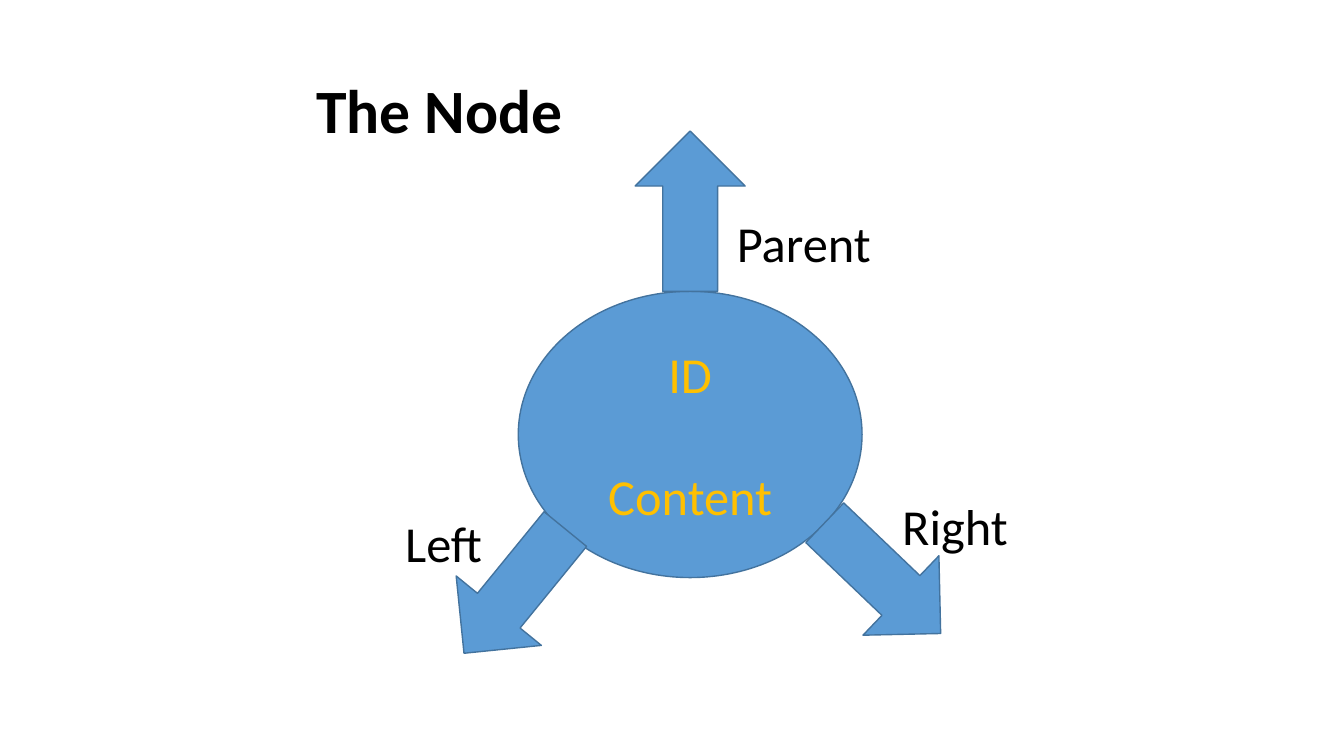
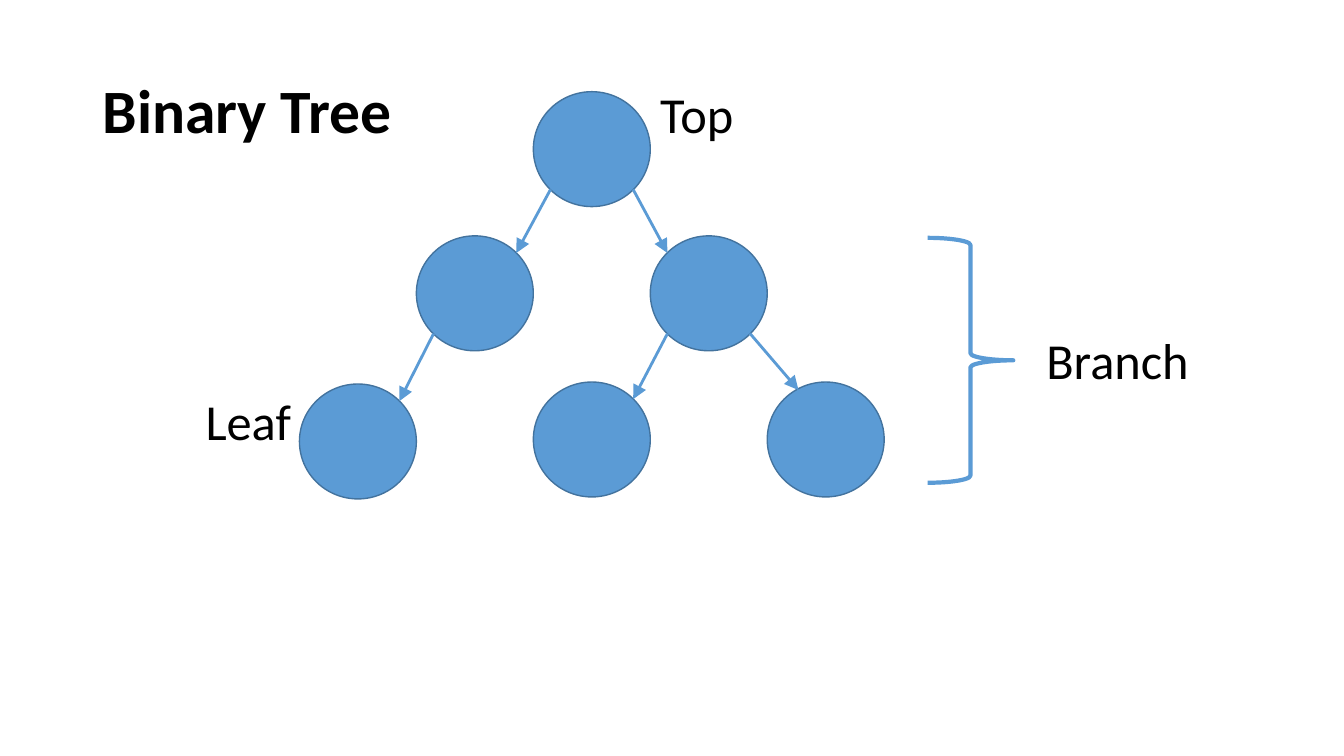
import pptx
import pptx.util
import pptx.dml.color
import pptx.enum.shapes
import pptx.enum.text
import pptx.oxml
import pptx.oxml.ns

PX = 9144
BLUE, EDGE, GOLD, BLACK = "5B9BD5", "43739E", "FFC000", "000000"
KIND = pptx.enum.shapes.MSO_SHAPE
ALIGN = pptx.enum.text.PP_ALIGN
MIDDLE = pptx.enum.text.MSO_ANCHOR.MIDDLE
rgb = pptx.dml.color.RGBColor.from_string


def shape(slide, kind, box, turn=0):
    item = slide.shapes.add_shape(kind, *[n * PX for n in box])
    item.shadow.inherit = False
    item.rotation = turn
    item.fill.solid()
    item.fill.fore_color.rgb = rgb(BLUE)
    item.line.color.rgb = rgb(EDGE)
    item.line.width = pptx.util.Pt(1)
    return item


def write(para, text, size=36, color=BLACK, bold=False, align=ALIGN.LEFT):
    para.text = text
    para.alignment = align
    para.font.name = "Calibri"
    para.font.size = pptx.util.Pt(size)
    para.font.bold = bold
    para.font.color.rgb = rgb(color)


deck = pptx.Presentation()
deck.slide_width = 1333 * PX
deck.slide_height = 750 * PX

pages = [
    ("The Node", 688, ALIGN.CENTER,
     [("Parent", 721, 205, 154), ("Left", 392, 503, 98), ("Right", 885, 486, 126)]),
    ("Binary Tree", 1150, ALIGN.LEFT,
     [("Top", 645, 78, 93), ("Leaf", 194, 382, 106), ("Branch", 1028, 322, 163)]),
]
for title, wide, align, labels in pages:
    slide = deck.slides.add_slide(deck.slide_layouts[6])
    frame = slide.shapes.add_textbox(92 * PX, 40 * PX, wide * PX, 145 * PX).text_frame
    frame.word_wrap = True
    frame.vertical_anchor = MIDDLE
    write(frame.paragraphs[0], title, 44, bold=True, align=align)
    frame.paragraphs[0].line_spacing = 0.9
    for text, left, top, width in labels:
        frame = slide.shapes.add_textbox(left * PX, top * PX, width * PX, 71 * PX).text_frame
        frame.word_wrap = False
        write(frame.paragraphs[0], text)

node, tree = deck.slides

frame = shape(node, KIND.OVAL, (514, 289, 341, 284)).text_frame
frame.vertical_anchor = MIDDLE
write(frame.paragraphs[0], "ID", color=GOLD, align=ALIGN.CENTER)
para = frame.add_paragraph()
write(para, "Content", color=GOLD, align=ALIGN.CENTER)
para.space_before = pptx.util.Pt(44)
for left, top, turn in [(456, 507, 39.2), (821, 494, 313.7), (630, 130, 180)]:
    shape(node, KIND.DOWN_ARROW, (left, top, 109, 159), turn)

WIDE, HIGH, STEP, INSET = 116, 114, 116, 17
spots = {
    name: (297 + STEP * col, top)
    for name, col, top in [
        ("top", 2, 91), ("right", 3, 234), ("left", 1, 234),
        ("leaf", 0, 381), ("inner", 2, 379), ("outer", 4, 379),
    ]
}
for left, top in spots.values():
    shape(tree, KIND.OVAL, (left, top, WIDE, HIGH))

links = [
    ("top", "right", INSET, INSET),
    ("top", "left", WIDE - INSET, INSET),
    ("left", "leaf", WIDE - INSET, INSET),
    ("right", "outer", 31, 8),
    ("right", "inner", WIDE - INSET, INSET),
]
for start, end, across, down in links:
    left, top = spots[start]
    goal = spots[end]
    out = WIDE - INSET if goal[0] > left else INSET
    ends = (left + out, top + HIGH - INSET, goal[0] + across, goal[1] + down)
    link = tree.shapes.add_connector(
        pptx.enum.shapes.MSO_CONNECTOR.STRAIGHT, *[n * PX for n in ends])
    link.line.color.rgb = rgb(BLUE)
    link.line.width = pptx.util.Pt(2)
    space = pptx.oxml.ns.nsdecls("a")
    link.line._get_or_add_ln().append(
        pptx.oxml.parse_xml(f'<a:tailEnd {space} type="triangle" w="lg" len="lg"/>'))
    link._element.spPr.append(pptx.oxml.parse_xml(f"<a:effectLst {space}/>"))

brace = shape(tree, KIND.RIGHT_BRACE, (920, 236, 85, 243))
brace.fill.background()
brace.line.color.rgb = rgb(BLUE)
brace.line.width = pptx.util.Pt(3)

deck.save("out.pptx")
